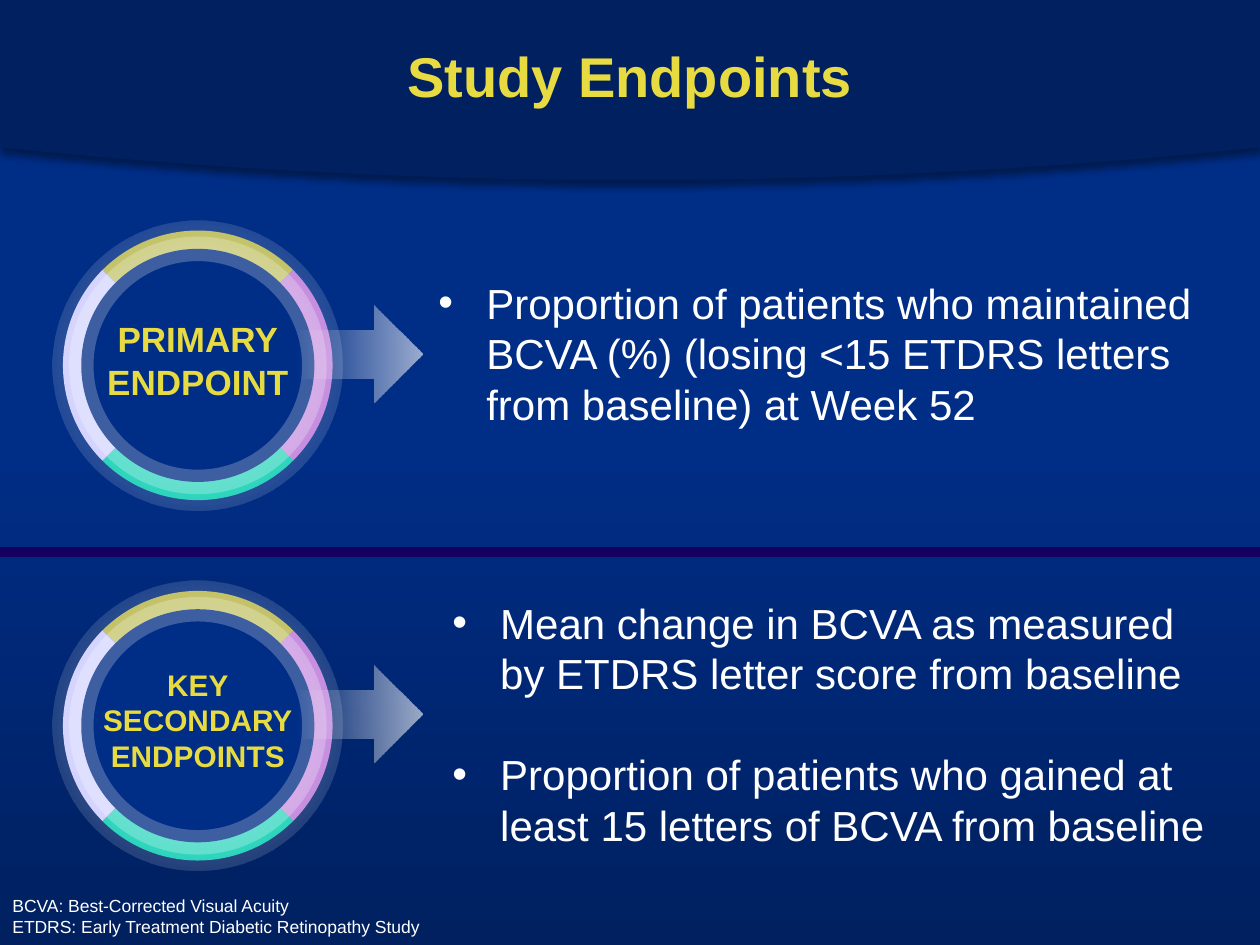
from lxml.etree import SubElement
from pptx import Presentation
from pptx.dml.color import RGBColor
from pptx.enum.shapes import MSO_CONNECTOR, MSO_SHAPE
from pptx.enum.text import MSO_ANCHOR, MSO_AUTO_SIZE, PP_ALIGN
from pptx.oxml.ns import qn
from pptx.util import Inches, Pt

COLORS = {
    "navy": "002060", "blue": "002D86", "divider": "150060", "yellow": "E7DB41",
    "pink": "BB79D9", "teal": "05CDB0", "lilac": "CCCCFF", "white": "FFFFFF", "black": "000000",
}
FONT = "Arial"
WIDTH, HEIGHT = 10, 7.5
TITLE = "Study Endpoints"
ENDPOINTS = [
    {"label": ["PRIMARY", "ENDPOINT"], "size": 20, "label_box": (1.64, 0.77),
     "body_box": (3.38, 2.15, 6.31, 1.31),
     "bullets": ["Proportion of patients who maintained BCVA (%) (losing <15 ETDRS letters from baseline) at Week 52"]},
    {"label": ["KEY", "SECONDARY", "ENDPOINTS"], "size": 17, "label_box": (1.72, 0.96),
     "body_box": (3.49, 4.69, 6.23, 2.12),
     "bullets": ["Mean change in BCVA as measured by ETDRS letter score from baseline",
                 "Proportion of patients who gained at least 15 letters of BCVA from baseline"]},
]
ABBREVIATIONS = ["BCVA: Best-Corrected Visual Acuity",
                 "ETDRS: Early Treatment Diabetic Retinopathy Study"]
QUARTERS = [("yellow", 225), ("pink", 315), ("teal", 45), ("lilac", 135)]
CENTER_X, FIRST_CENTER_Y, ROW_STEP = 1.57, 2.9, 2.86
HALO, RING, DISC = 2.3, 2.14, 1.85
HEADER_EDGE, HEADER_DEPTH, HEADER_STEPS = 1.17, 0.26, 60


def rgb(name):
    return RGBColor.from_string(COLORS[name])


def box(*lengths):
    return [Inches(length) for length in lengths]


def centered(x, y, width, height):
    return box(x - width / 2, y - height / 2, width, height)


def place(shape, lengths):
    shape.left, shape.top, shape.width, shape.height = box(*lengths)


def set_alpha(parent, percent):
    color = parent.find(".//" + qn("a:srgbClr"))
    SubElement(color, qn("a:alpha"), val=str(percent * 1000))


def set_gradient(fill, parent, stops, angle=None):
    fill.gradient()
    gradient = parent.find(".//" + qn("a:gradFill"))
    for child in list(gradient):
        gradient.remove(child)
    stop_list = SubElement(gradient, qn("a:gsLst"))
    for position, color, alpha in stops:
        stop = SubElement(stop_list, qn("a:gs"), pos=str(position * 1000))
        SubElement(stop, qn("a:srgbClr"), val=COLORS[color])
        if alpha < 100:
            set_alpha(stop, alpha)
    if angle is None:
        circle = SubElement(gradient, qn("a:path"), path="circle")
        SubElement(circle, qn("a:fillToRect"), {side: "50000" for side in "ltrb"})
    else:
        SubElement(gradient, qn("a:lin"), ang=str(angle * 60000), scaled="0")


def add_preset(shapes, kind, lengths, color=None):
    shape = shapes.add_shape(kind, *lengths)
    shape.shadow.inherit = False
    shape.line.fill.background()
    if color:
        shape.fill.solid()
        shape.fill.fore_color.rgb = rgb(color)
    return shape


def format_font(paragraph, size, color, bold=False):
    paragraph.font.name = FONT
    paragraph.font.size = Pt(size)
    paragraph.font.bold = bold
    paragraph.font.color.rgb = rgb(color)


def add_header(slide):
    points = []
    for step in range(HEADER_STEPS + 1):
        share = step / HEADER_STEPS
        sag = HEADER_DEPTH * (1 - (2 * share - 1) ** 2)
        points.append(box(WIDTH * share, HEADER_EDGE + sag))
    builder = slide.shapes.build_freeform(0, 0)
    builder.add_line_segments(points + [box(WIDTH, 0)], close=True)
    header = builder.convert_to_shape()
    header.fill.solid()
    header.fill.fore_color.rgb = rgb("navy")
    header.line.fill.background()
    header.shadow.inherit = False
    effects = header.element.spPr.find(qn("a:effectLst"))
    shadow = SubElement(effects, qn("a:outerShdw"), blurRad=str(Pt(4)), dist=str(Pt(3)),
                        dir=str(90 * 60000), algn="t", rotWithShape="0")
    SubElement(shadow, qn("a:srgbClr"), val=COLORS["black"])
    set_alpha(shadow, 40)
    slide.shapes.title.element.addprevious(header.element)


def add_title(title):
    place(title, (0, 0, WIDTH, 1.26))
    title.text_frame.text = TITLE
    title.text_frame.auto_size = MSO_AUTO_SIZE.NONE
    title.text_frame.vertical_anchor = MSO_ANCHOR.MIDDLE
    paragraph = title.text_frame.paragraphs[0]
    paragraph.alignment = PP_ALIGN.CENTER
    paragraph.line_spacing = 0.9
    format_font(paragraph, 32, "yellow", True)


def add_divider(slide):
    line = slide.shapes.add_connector(MSO_CONNECTOR.STRAIGHT, *box(0, 4.38, WIDTH, 4.38))
    line.line.color.rgb = rgb("divider")
    line.line.width = Pt(6)
    SubElement(line.element.spPr, qn("a:effectLst"))


def fill_body(body, endpoint):
    place(body, endpoint["body_box"])
    frame = body.text_frame
    frame.text = "\n".join(endpoint["bullets"])
    frame.auto_size = MSO_AUTO_SIZE.NONE
    for index, paragraph in enumerate(frame.paragraphs):
        properties = paragraph._p.get_or_add_pPr()
        properties.set("marL", str(Inches(0.38)))
        properties.set("indent", str(Inches(-0.38)))
        SubElement(properties, qn("a:buChar"), char="•")
        paragraph.space_before = Pt(29 if index else 0)
        format_font(paragraph, 24, "white")


def add_ring(slide, center_y):
    shapes = slide.shapes.add_group_shape().shapes
    for color, start in QUARTERS:
        quarter = add_preset(shapes, MSO_SHAPE.PIE, centered(CENTER_X, center_y, RING, RING), color)
        quarter.adjustments[0] = start * 0.6
        quarter.adjustments[1] = (start + 90) % 360 * 0.6
        if color == "yellow":
            set_alpha(quarter.element.spPr, 80)
    halo = add_preset(shapes, MSO_SHAPE.OVAL, centered(CENTER_X, center_y, HALO, HALO))
    set_gradient(halo.fill, halo.element.spPr,
                 [(0, "white", 100), (50, "white", 23), (100, "white", 0)])
    disc = add_preset(shapes, MSO_SHAPE.OVAL, centered(CENTER_X, center_y, DISC, DISC), "blue")
    disc.line.color.rgb = rgb("white")
    disc.line.width = Pt(14)
    set_alpha(disc.element.spPr.find(qn("a:ln")), 23)


def add_label(slide, endpoint, center_y):
    label = slide.shapes.add_textbox(*centered(CENTER_X, center_y - 0.04, *endpoint["label_box"]))
    label.text_frame.word_wrap = False
    label.text_frame.auto_size = MSO_AUTO_SIZE.SHAPE_TO_FIT_TEXT
    paragraph = label.text_frame.paragraphs[0]
    paragraph.text = "\v".join(endpoint["label"])
    paragraph.alignment = PP_ALIGN.CENTER
    format_font(paragraph, endpoint["size"], "yellow", True)


def add_arrow(slide, center_y):
    arrow = add_preset(slide.shapes, MSO_SHAPE.RIGHT_ARROW, centered(2.85, center_y - 0.09, 1, 0.77))
    set_gradient(arrow.fill, arrow.element.spPr, [(0, "white", 0), (100, "white", 61)], 0)


def add_abbreviations(slide):
    note = slide.shapes.add_textbox(*box(0, 7.05, 3.79, 0.45))
    note.text_frame.word_wrap = True
    note.text_frame.text = "\n".join(ABBREVIATIONS)
    for paragraph in note.text_frame.paragraphs:
        format_font(paragraph, 10, "white")


def main():
    presentation = Presentation()
    presentation.slide_width, presentation.slide_height = box(WIDTH, HEIGHT)
    slide = presentation.slides.add_slide(presentation.slide_layouts.get_by_name("Two Content"))
    set_gradient(slide.background.fill, slide.element,
                 [(0, "navy", 100), (53, "blue", 100), (100, "blue", 100)], 270)
    title, *bodies = slide.placeholders
    add_header(slide)
    add_title(title)
    add_divider(slide)
    for row, (endpoint, body) in enumerate(zip(ENDPOINTS, bodies)):
        center_y = FIRST_CENTER_Y + row * ROW_STEP
        fill_body(body, endpoint)
        add_ring(slide, center_y)
        add_label(slide, endpoint, center_y)
        add_arrow(slide, center_y)
    add_abbreviations(slide)
    presentation.save("out.pptx")


if __name__ == "__main__":
    main()
